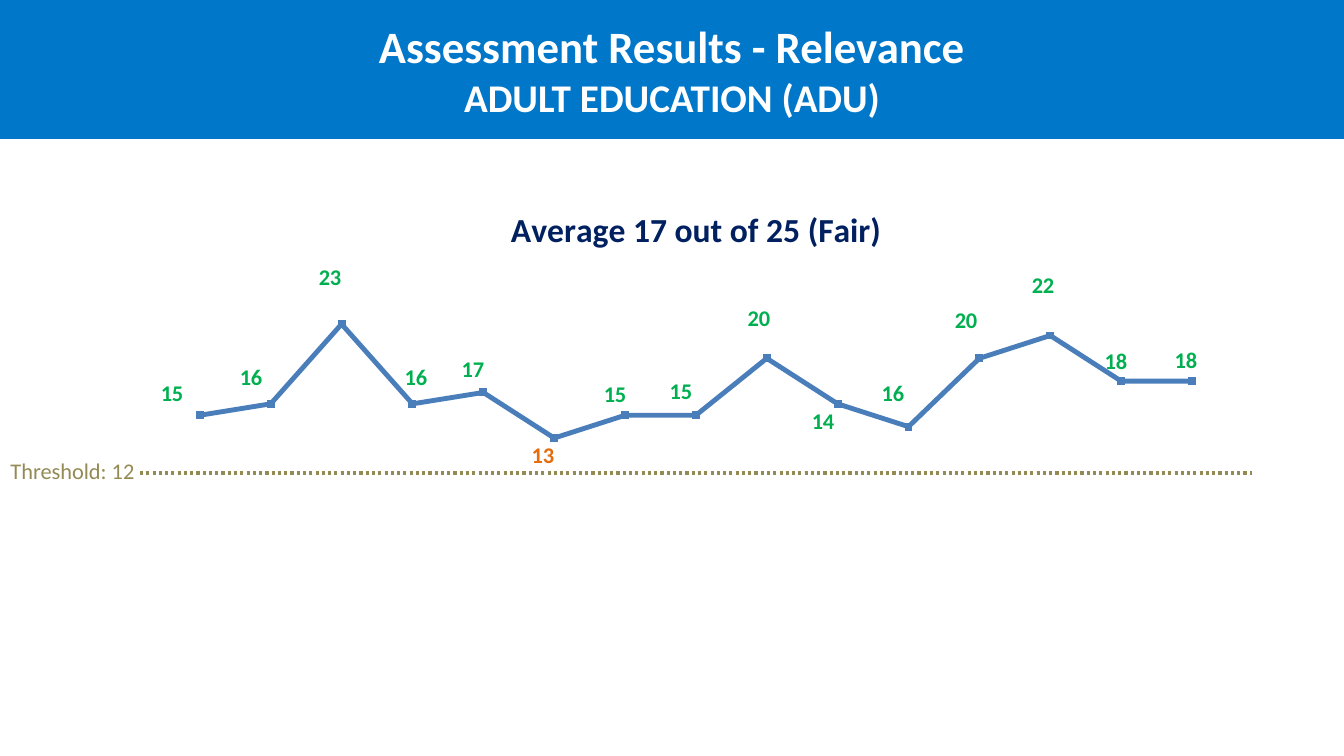
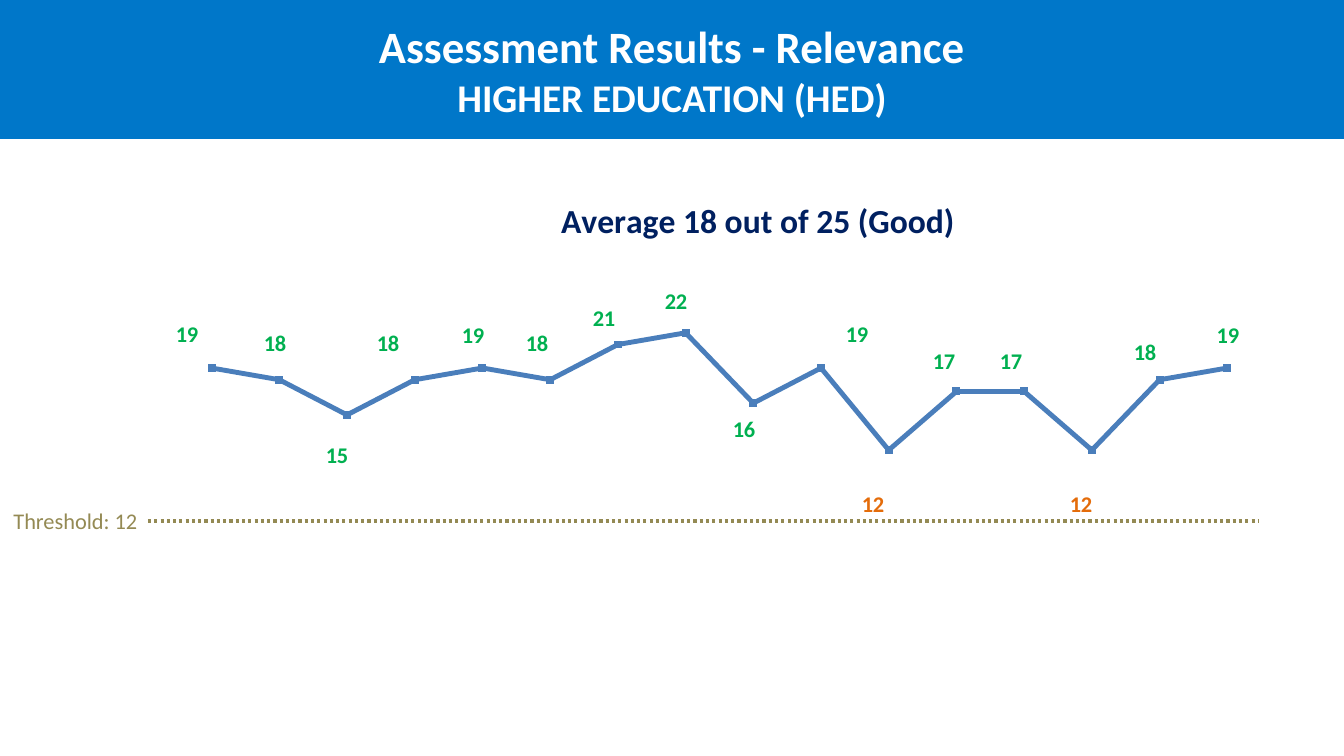
"""Build two assessment slides, each with a scored line chart and a threshold."""
from lxml.etree import SubElement
from pptx import Presentation
from pptx.chart.data import CategoryChartData
from pptx.dml.color import RGBColor
from pptx.enum.chart import XL_CHART_TYPE, XL_LABEL_POSITION, XL_MARKER_STYLE, XL_TICK_LABEL_POSITION
from pptx.enum.dml import MSO_LINE
from pptx.enum.shapes import MSO_CONNECTOR
from pptx.enum.text import MSO_ANCHOR, MSO_AUTO_SIZE, PP_ALIGN
from pptx.oxml import parse_xml
from pptx.oxml.ns import nsdecls, qn
from pptx.util import Emu, Pt


class Theme:
    face = "Calibri"
    band = RGBColor.from_string("0077C9")
    white = RGBColor.from_string("FFFFFF")
    navy = RGBColor.from_string("002060")
    line = RGBColor.from_string("4A7EBB")
    mark = RGBColor.from_string("4F81BD")
    good = RGBColor.from_string("00B050")
    weak = RGBColor.from_string("E46C0A")
    limit = RGBColor.from_string("948A54")
    head, sub, title, label, base = Pt(32), Pt(28), Pt(24), Pt(16), Pt(10)


WIDE, HIGH, TOP = 1344, 756, 25
SLIDES = [
    dict(
        name="ADULT EDUCATION (ADU)", title="Average 17 out of 25 (Fair)",
        frame=(148, 187, 1096, 416), plot=(0.015, 0.275, 0.97, 0.685),
        head=(505, 201), rule=(140, 1252, 473), note=(-11, 452),
        vals=[15, 16, 23, 16, 17, 13, 15, 15, 20, 16, 14, 20, 22, 18, 18],
        tags=[(172, 394), (251, 378), (330, 278), (416, 378), (473, 370),
              (543, 456), (615, 395), (681, 392), (759, 319), (893, 394),
              (823, 422), (966, 321), (1043, 286), (1116, 362), (1186, 361)],
    ),
    dict(
        name="HIGHER EDUCATION (HED)", title="Average 18 out of 25 (Good)",
        frame=(161, 184, 1117, 424), plot=(0.015, 0.268, 0.97, 0.692),
        head=(555, 192), rule=(148, 1259, 521), note=(-8, 502),
        vals=[19, 18, 15, 18, 19, 18, 21, 22, 16, 19, 12, 17, 17, 12, 18, 19],
        tags=[(187, 335), (275, 344), (337, 456), (388, 344), (473, 336),
              (537, 344), (604, 319), (676, 302), (744, 430), (857, 335),
              (873, 505), (944, 362), (1011, 362), (1081, 505), (1145, 353),
              (1228, 336)],
    ),
]


def px(*nums):
    return [Emu(round(n * 914400 / 100.8)) for n in nums]


def layout(host, slot, **parts):
    for old in host.findall(qn("c:layout")):
        host.remove(old)
    node = parse_xml(f"<c:layout {nsdecls('c')}><c:manualLayout/></c:layout>")
    for key, val in parts.items():
        SubElement(node[0], qn(f"c:{key}")).set("val", str(val))
    host.insert(slot, node)


deck = Presentation()
deck.slide_width, deck.slide_height = px(WIDE, HIGH)

for data in SLIDES:
    slide = deck.slides.add_slide(deck.slide_layouts[5])
    band = slide.shapes.title
    band.left, band.top, band.width, band.height = px(0, 0, WIDE, 139)
    band.fill.solid()
    band.fill.fore_color.rgb = Theme.band
    text = band.text_frame
    text.text = f"Assessment Results - Relevance\n{data['name']}"
    text.auto_size = MSO_AUTO_SIZE.NONE
    text.vertical_anchor = MSO_ANCHOR.MIDDLE
    for para, size in zip(text.paragraphs, (Theme.head, Theme.sub)):
        para.alignment = PP_ALIGN.CENTER
        para.font.name, para.font.size, para.font.bold = Theme.face, size, True
        para.font.color.rgb = Theme.white

    vals = data["vals"]
    left, top, width, height = data["frame"]
    table = CategoryChartData()
    table.categories = [str(n + 1) for n in range(len(vals))]
    table.add_series("Series 1", vals)
    chart = slide.shapes.add_chart(
        XL_CHART_TYPE.LINE_MARKERS, *px(*data["frame"]), table).chart
    chart.has_legend = False
    chart.font.name, chart.font.size = Theme.face, Theme.base

    chart.has_title = True
    title = chart.chart_title.text_frame
    title.text = data["title"]
    font = title.paragraphs[0].font
    font.name, font.size, font.bold = Theme.face, Theme.title, True
    font.color.rgb = Theme.navy

    axis = chart.value_axis
    axis.minimum_scale, axis.maximum_scale = 0, TOP
    axis.has_major_gridlines = False
    axis.visible = False
    chart.category_axis.tick_label_position = XL_TICK_LABEL_POSITION.NONE
    chart.category_axis.format.line.fill.background()

    line = chart.plots[0].series[0]
    line.smooth = False
    line.format.line.width = Pt(3.5)
    line.format.line.color.rgb = Theme.line
    line.marker.style, line.marker.size = XL_MARKER_STYLE.SQUARE, 5
    line.marker.format.fill.solid()
    line.marker.format.fill.fore_color.rgb = Theme.mark
    line.marker.format.line.color.rgb = Theme.mark
    for n, val in enumerate(vals):
        label = line.points[n].data_label
        label.position = XL_LABEL_POSITION.CENTER
        font = label.font
        font.name, font.size, font.bold = Theme.face, Theme.label, True
        font.color.rgb = Theme.weak if val <= 13 else Theme.good

    root = chart._chartSpace
    for lead in root.iter(qn("c:showLeaderLines")):
        lead.set("val", "0")
    x, y, w, h = data["plot"]
    layout(root.find(f".//{qn('c:plotArea')}"), 0, layoutTarget="inner",
           xMode="edge", yMode="edge", x=x, y=y, w=w, h=h)
    layout(root.find(f".//{qn('c:title')}"), 1, xMode="edge", yMode="edge",
           x=(data["head"][0] - left) / width, y=(data["head"][1] - top) / height)
    labels = root.findall(f".//{qn('c:dLbl')}")
    for n, (node, val, tag) in enumerate(zip(labels, vals, data["tags"])):
        across = x + w * (n + 0.5) / len(vals)
        down = y + h * (1 - val / TOP)
        layout(node, 1, x=round((tag[0] - left) / width - across, 4),
               y=round((tag[1] - top) / height - down, 4))

    start, end, level = data["rule"]
    rule = slide.shapes.add_connector(
        MSO_CONNECTOR.STRAIGHT, *px(start, level, end, level))
    rule.line.color.rgb = Theme.limit
    rule.line.width = Pt(2.25)
    rule.line.dash_style = MSO_LINE.ROUND_DOT
    SubElement(rule._element.spPr, qn("a:effectLst"))

    note = slide.shapes.add_textbox(*px(*data["note"], 167, 37)).text_frame
    note.word_wrap = True
    note.text = "Threshold: 12"
    para = note.paragraphs[0]
    para.alignment = PP_ALIGN.CENTER
    para.font.name, para.font.size = Theme.face, Theme.label
    para.font.color.rgb = Theme.limit

deck.save("out.pptx")
